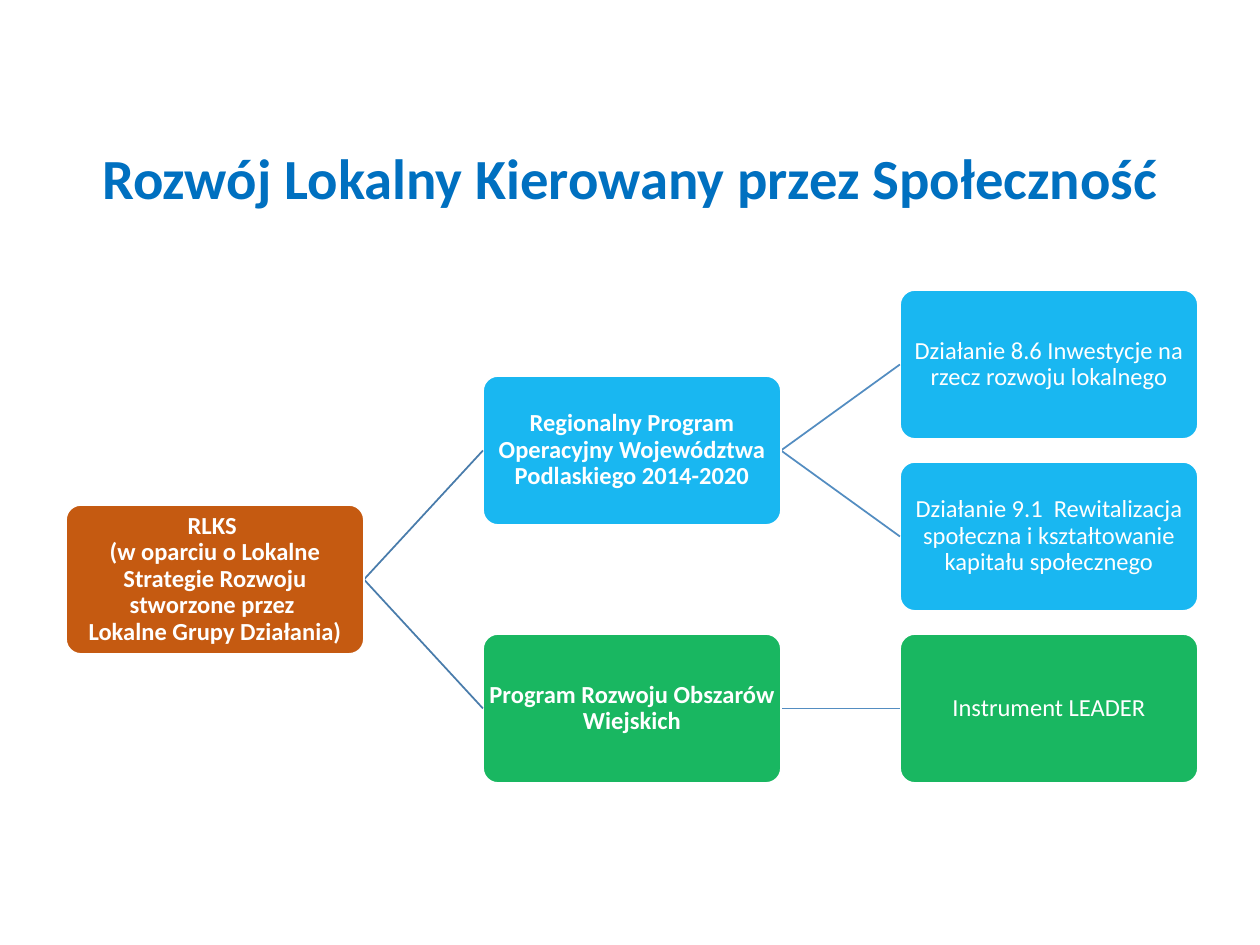
import pptx
import pptx.dml.color
import pptx.enum.shapes
import pptx.enum.text
import pptx.oxml.ns
import pptx.oxml.xmlchemy
import pptx.util

COLORS = {
    "title": "0070C0", "white": "FFFFFF", "orange": "C55A11", "blue": "00B0F0",
    "green": "00B050", "root link": "497CAB", "leaf link": "538DC1",
}
TITLE = "Rozwój Lokalny Kierowany przez Społeczność"
# Each node: text, fill, opacity in percent, bold, children
TREE = (
    "RLKS \v(w oparciu o Lokalne Strategie Rozwoju stworzone przez \v"
    "Lokalne Grupy Działania)", "orange", 100, True, [
        ("Regionalny Program Operacyjny Województwa Podlaskiego 2014-2020",
         "blue", 90, True, [
             ("Działanie 8.6 Inwestycje na rzecz rozwoju lokalnego",
              "blue", 90, False, []),
             ("Działanie 9.1  Rewitalizacja społeczna i kształtowanie "
              "kapitału społecznego", "blue", 90, False, []),
         ]),
        ("Program Rozwoju Obszarów Wiejskich", "green", 90, True, [
            ("Instrument LEADER", "green", 90, False, []),
        ]),
    ])
LINK_COLORS = ["root link", "leaf link"]

BOX_WIDTH, BOX_HEIGHT = 298, 149
LEFT, TOP = 66, 290
COLUMN_STEP, ROW_STEP = 417, 172


def px(count):
    return pptx.util.Emu(round(count * 914400 / 126))


def color(name):
    return pptx.dml.color.RGBColor.from_string(COLORS[name])


def write(frame, text, size, color_name, bold):
    frame.word_wrap = True
    frame.text = text
    para = frame.paragraphs[0]
    para.alignment = pptx.enum.text.PP_ALIGN.CENTER
    para.line_spacing = 0.9
    for span in para.runs:
        span.font.name = "Calibri"
        span.font.size = pptx.util.Pt(size)
        span.font.bold = bold
        span.font.color.rgb = color(color_name)


def add_title(page):
    box = page.shapes.add_textbox(px(30), px(144), px(1200), px(92))
    write(box.text_frame, TITLE, 32.4, "title", True)


def add_box(page, left, top, text, fill, opacity, bold):
    box = page.shapes.add_shape(
        pptx.enum.shapes.MSO_SHAPE.ROUNDED_RECTANGLE,
        px(left), px(top), px(BOX_WIDTH), px(BOX_HEIGHT))
    box.adjustments[0] = 0.1
    box.shadow.inherit = False
    box.fill.solid()
    box.fill.fore_color.rgb = color(fill)
    if opacity < 100:
        tint = box._element.spPr.find(".//" + pptx.oxml.ns.qn("a:srgbClr"))
        alpha = pptx.oxml.xmlchemy.OxmlElement("a:alpha")
        alpha.set("val", str(opacity * 1000))
        tint.append(alpha)
    box.line.color.rgb = color("white")
    box.line.width = pptx.util.Pt(1)
    frame = box.text_frame
    frame.margin_left = frame.margin_right = px(1)
    frame.margin_top = frame.margin_bottom = px(1)
    frame.vertical_anchor = pptx.enum.text.MSO_ANCHOR.MIDDLE
    write(frame, text, 14, "white", bold)


def add_link(page, start_x, start_y, end_x, end_y, color_name):
    link = page.shapes.add_connector(
        pptx.enum.shapes.MSO_CONNECTOR.STRAIGHT,
        px(start_x), px(start_y), px(end_x), px(end_y))
    link.line.color.rgb = color(color_name)
    link.line.width = pptx.util.Pt(1)
    link._element.spPr.append(pptx.oxml.xmlchemy.OxmlElement("a:effectLst"))


def add_branch(page, node, column, row):
    """Draw a node centred on its children; return its top and the next free row."""
    text, fill, opacity, bold, children = node
    left = LEFT + column * COLUMN_STEP
    child_tops = []
    for child in children:
        child_top, row = add_branch(page, child, column + 1, row)
        child_tops.append(child_top)
    if children:
        top = (child_tops[0] + child_tops[-1]) / 2
    else:
        top = TOP + row * ROW_STEP
        row += 1
    for child_top in child_tops:
        add_link(page, left + BOX_WIDTH, top + BOX_HEIGHT / 2,
                 left + COLUMN_STEP, child_top + BOX_HEIGHT / 2,
                 LINK_COLORS[column])
    add_box(page, left, top, text, fill, opacity, bold)
    return top, row


def main():
    deck = pptx.Presentation()
    deck.slide_width, deck.slide_height = px(1260), px(945)
    page = deck.slides.add_slide(deck.slide_layouts[6])
    add_title(page)
    add_branch(page, TREE, 0, 0)
    deck.save("out.pptx")


if __name__ == "__main__":
    main()
